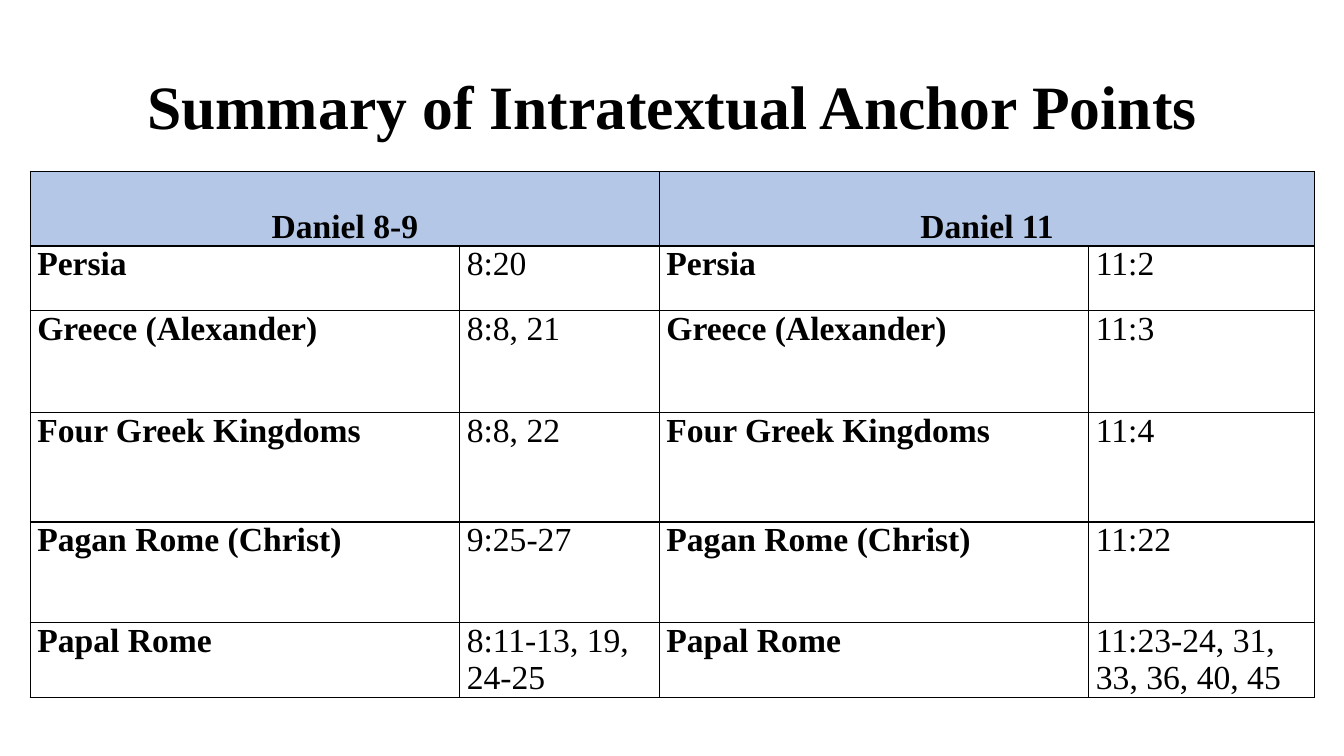
from lxml import etree
from pptx import Presentation
from pptx import util as u
from pptx.dml.color import RGBColor
from pptx.enum import text
from pptx.oxml import ns

BLACK = RGBColor(0x00, 0x00, 0x00)
HEADER_BLUE = RGBColor(0xB4, 0xC7, 0xE7)
FONT = "Times New Roman"

TITLE_BOX = (0.92, 0.13, 11.5, 1.46)
TABLE_BOX = (0.3, 1.7, 12.74, 5.21)
COLUMN_WIDTHS = (4.26, 1.98, 4.26, 2.24)
ROW_HEIGHTS = (0.74, 0.64, 1.01, 1.09, 1, 0.73)

HEADINGS = ("Daniel 8-9", "Daniel 11")
ANCHOR_POINTS = (
    ("Persia", "8:20", "11:2"),
    ("Greece (Alexander)", "8:8, 21", "11:3"),
    ("Four Greek Kingdoms", "8:8, 22", "11:4"),
    ("Pagan Rome (Christ)", "9:25-27", "11:22"),
    ("Papal Rome", "8:11-13, 19, 24-25", "11:23-24, 31, 33, 36, 40, 45"),
)


def set_attributes(target, values):
    for name, value in values.items():
        setattr(target, name, value)


def write(frame, words, size, bold=True, **paragraph_format):
    """Fill a text frame with one formatted paragraph."""
    paragraph = frame.paragraphs[0]
    set_attributes(paragraph, paragraph_format)
    run = paragraph.add_run()
    run.text = words
    set_attributes(run.font, {"name": FONT, "size": u.Pt(size), "bold": bold})
    run.font.color.rgb = BLACK


def add_borders(cell):
    properties = cell._tc.get_or_add_tcPr()
    for position, side in enumerate(("lnL", "lnR", "lnT", "lnB")):
        line = etree.Element(ns.qn(f"a:{side}"), w=str(u.Pt(1)))
        fill = etree.SubElement(line, ns.qn("a:solidFill"))
        etree.SubElement(fill, ns.qn("a:srgbClr"), val=str(BLACK))
        properties.insert(position, line)


def format_cell(cell, fill=None):
    side_margin = u.Inches(0.07)
    set_attributes(cell, {"margin_left": side_margin, "margin_right": side_margin,
                          "margin_top": 0, "margin_bottom": 0})
    if fill is None:
        cell.fill.background()
    else:
        cell.fill.solid()
        cell.fill.fore_color.rgb = fill
    add_borders(cell)


def place_title(slide, box):
    title = slide.shapes.title
    set_attributes(title, dict(zip(("left", "top", "width", "height"), map(u.Inches, box))))
    set_attributes(title.text_frame, {"auto_size": text.MSO_AUTO_SIZE.NONE,
                                      "vertical_anchor": text.MSO_ANCHOR.MIDDLE})
    write(title.text_frame, "Summary of Intratextual Anchor Points", 44,
          alignment=text.PP_ALIGN.CENTER, line_spacing=1.5)


def add_anchor_table(slide, box):
    table = slide.shapes.add_table(len(ROW_HEIGHTS), len(COLUMN_WIDTHS),
                                   *map(u.Inches, box)).table
    set_attributes(table, {"first_row": False, "horz_banding": False})
    for column, width in zip(table.columns, COLUMN_WIDTHS):
        column.width = u.Inches(width)
    for row, height in zip(table.rows, ROW_HEIGHTS):
        row.height = u.Inches(height)

    for cell in table.rows[0].cells:
        format_cell(cell, HEADER_BLUE)
    for index, heading in enumerate(HEADINGS):
        cell = table.cell(0, 2 * index)
        cell.merge(table.cell(0, 2 * index + 1))
        write(cell.text_frame, heading, 24,
              alignment=text.PP_ALIGN.CENTER, line_spacing=2.0)

    for row, (kingdom, first_verses, second_verses) in enumerate(ANCHOR_POINTS, 1):
        for column, words in enumerate((kingdom, first_verses, kingdom, second_verses)):
            cell = table.cell(row, column)
            format_cell(cell)
            write(cell.text_frame, words, 24, bold=column % 2 == 0)


def main():
    presentation = Presentation()
    set_attributes(presentation, {"slide_width": u.Inches(13.33),
                                  "slide_height": u.Inches(7.5)})
    slide = presentation.slides.add_slide(presentation.slide_layouts.get_by_name("Title Only"))
    place_title(slide, TITLE_BOX)
    add_anchor_table(slide, TABLE_BOX)
    presentation.save("out.pptx")


if __name__ == "__main__":
    main()
